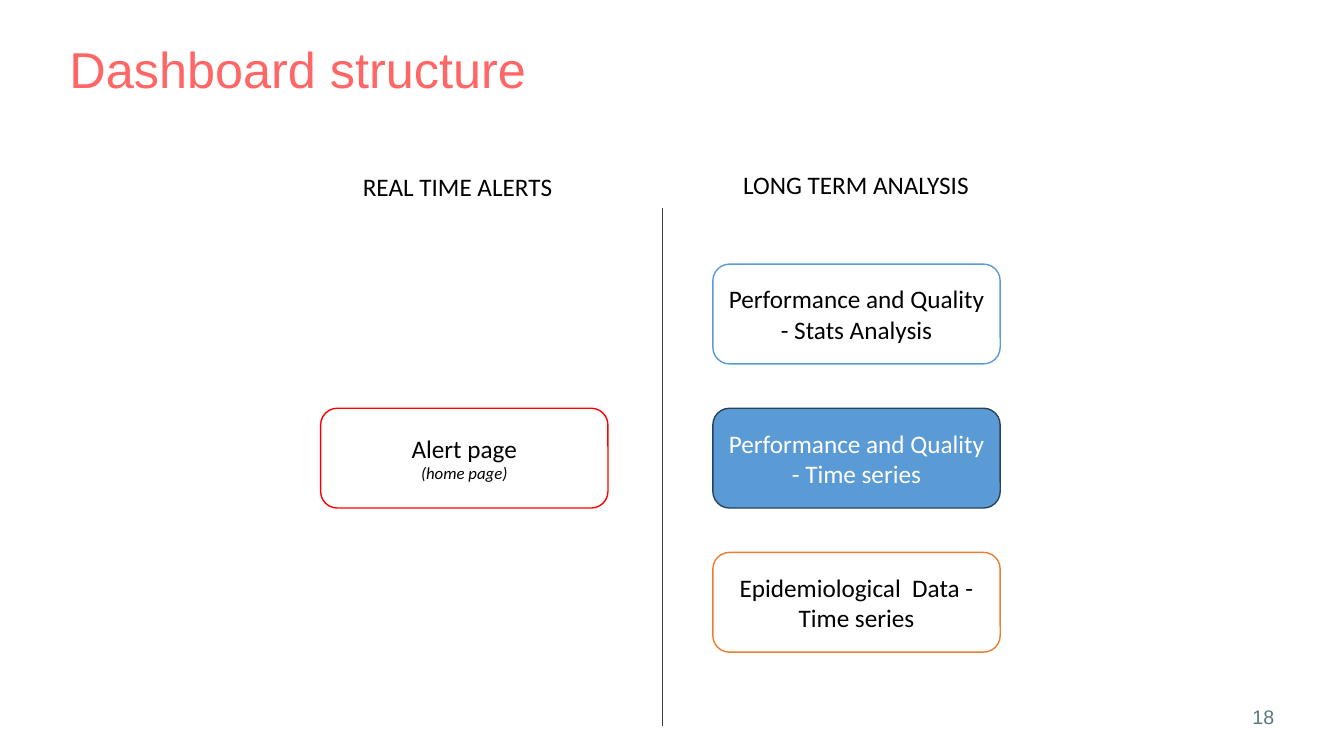
import pptx
import pptx.dml.color
import pptx.enum.shapes
import pptx.enum.text
import pptx.util
import lxml.etree
from pptx.util import Inches

RGBColor = pptx.dml.color.RGBColor
ALIGN = pptx.enum.text.PP_ALIGN
ANCHOR = pptx.enum.text.MSO_ANCHOR
FIT = pptx.enum.text.MSO_AUTO_SIZE

CORAL = RGBColor(0xFF, 0x66, 0x66)
SLATE = RGBColor(0x5E, 0x77, 0x7A)
BLACK = RGBColor(0x00, 0x00, 0x00)
WHITE = RGBColor(0xFF, 0xFF, 0xFF)
RED = RGBColor(0xFF, 0x00, 0x00)
ORANGE = RGBColor(0xED, 0x7D, 0x31)
BLUE = RGBColor(0x5B, 0x9B, 0xD5)
NAVY = RGBColor(0x28, 0x44, 0x5D)
GRAY = RGBColor(0x40, 0x40, 0x40)


def write_span(para, text, color, formats):
    span = para.add_run()
    span.text = text
    span.font.color.rgb = color
    for name, value in formats.items():
        setattr(span.font, name, value)


TITLE_FONT = {"name": "Arial", "size": pptx.util.Pt(36)}
NUMBER_FONT = {"name": "Arial", "size": pptx.util.Pt(14)}
BODY_FONT = {"name": "Calibri", "size": pptx.util.Pt(18)}
NOTE_FONT = {"name": "Calibri", "size": pptx.util.Pt(12), "italic": True}

deck = pptx.Presentation()
deck.slide_width = Inches(13.33)
deck.slide_height = Inches(7.5)
page = deck.slides.add_slide(deck.slide_layouts[6])

TITLE_FRAME = {"word_wrap": True, "auto_size": FIT.NONE}
NUMBER_FRAME = {"word_wrap": True, "auto_size": FIT.SHAPE_TO_FIT_TEXT}
HEADING_FRAME = {"word_wrap": False, "auto_size": FIT.SHAPE_TO_FIT_TEXT}
labels = [
    ("Dashboard structure", (0.59, 0.4, 10.53, 1.45), CORAL, TITLE_FONT,
     TITLE_FRAME, {"alignment": ALIGN.LEFT, "line_spacing": 0.9}),
    ("REAL TIME ALERTS", (3.5, 1.65, 2.22, 0.4), BLACK, BODY_FONT,
     HEADING_FRAME, {"alignment": ALIGN.LEFT}),
    ("LONG TERM ANALYSIS", (7.26, 1.63, 2.46, 0.4), BLACK, BODY_FONT,
     HEADING_FRAME, {"alignment": ALIGN.CENTER}),
    ("18", (12.15, 6.94, 0.76, 0.34), SLATE, NUMBER_FONT,
     NUMBER_FRAME, {"alignment": ALIGN.CENTER}),
]
for text, place, color, font, frame_formats, para_formats in labels:
    frame = page.shapes.add_textbox(*map(Inches, place)).text_frame
    for name, value in frame_formats.items():
        setattr(frame, name, value)
    para = frame.paragraphs[0]
    for name, value in para_formats.items():
        setattr(para, name, value)
    write_span(para, text, color, font)

divider = page.shapes.add_connector(
    pptx.enum.shapes.MSO_CONNECTOR.STRAIGHT,
    Inches(6.57), Inches(2.06), Inches(6.57), Inches(7.2))
divider.line.color.rgb = GRAY
divider.line.width = pptx.util.Pt(1)
lxml.etree.SubElement(divider._element.spPr, pptx.oxml.ns.qn("a:effectLst"))

ALERT_LEFT, ANALYSIS_LEFT = 3.18, 7.07
FIRST_TOP, ROW_STEP = 2.62, 1.43
dashboard_pages = [
    (ALERT_LEFT, 1, WHITE, RED, BLACK,
     [("Alert page", BODY_FONT), ("(home page)", NOTE_FONT)]),
    (ANALYSIS_LEFT, 0, WHITE, BLUE, BLACK,
     [("Performance and Quality - Stats Analysis", BODY_FONT)]),
    (ANALYSIS_LEFT, 1, BLUE, NAVY, WHITE,
     [("Performance and Quality - Time series", BODY_FONT)]),
    (ANALYSIS_LEFT, 2, WHITE, ORANGE, BLACK,
     [("Epidemiological  Data - Time series", BODY_FONT)]),
]
for left, row, fill, outline, color, lines in dashboard_pages:
    box = page.shapes.add_shape(
        pptx.enum.shapes.MSO_SHAPE.ROUNDED_RECTANGLE,
        Inches(left), Inches(FIRST_TOP + row * ROW_STEP), Inches(2.85), Inches(0.99))
    box.shadow.inherit = False
    box.fill.solid()
    box.fill.fore_color.rgb = fill
    box.line.color.rgb = outline
    box.line.width = pptx.util.Pt(1)
    frame = box.text_frame
    frame.word_wrap = True
    frame.vertical_anchor = ANCHOR.MIDDLE
    for index, (text, font) in enumerate(lines):
        para = frame.add_paragraph() if index else frame.paragraphs[0]
        para.alignment = ALIGN.CENTER
        write_span(para, text, color, font)

deck.save("out.pptx")
